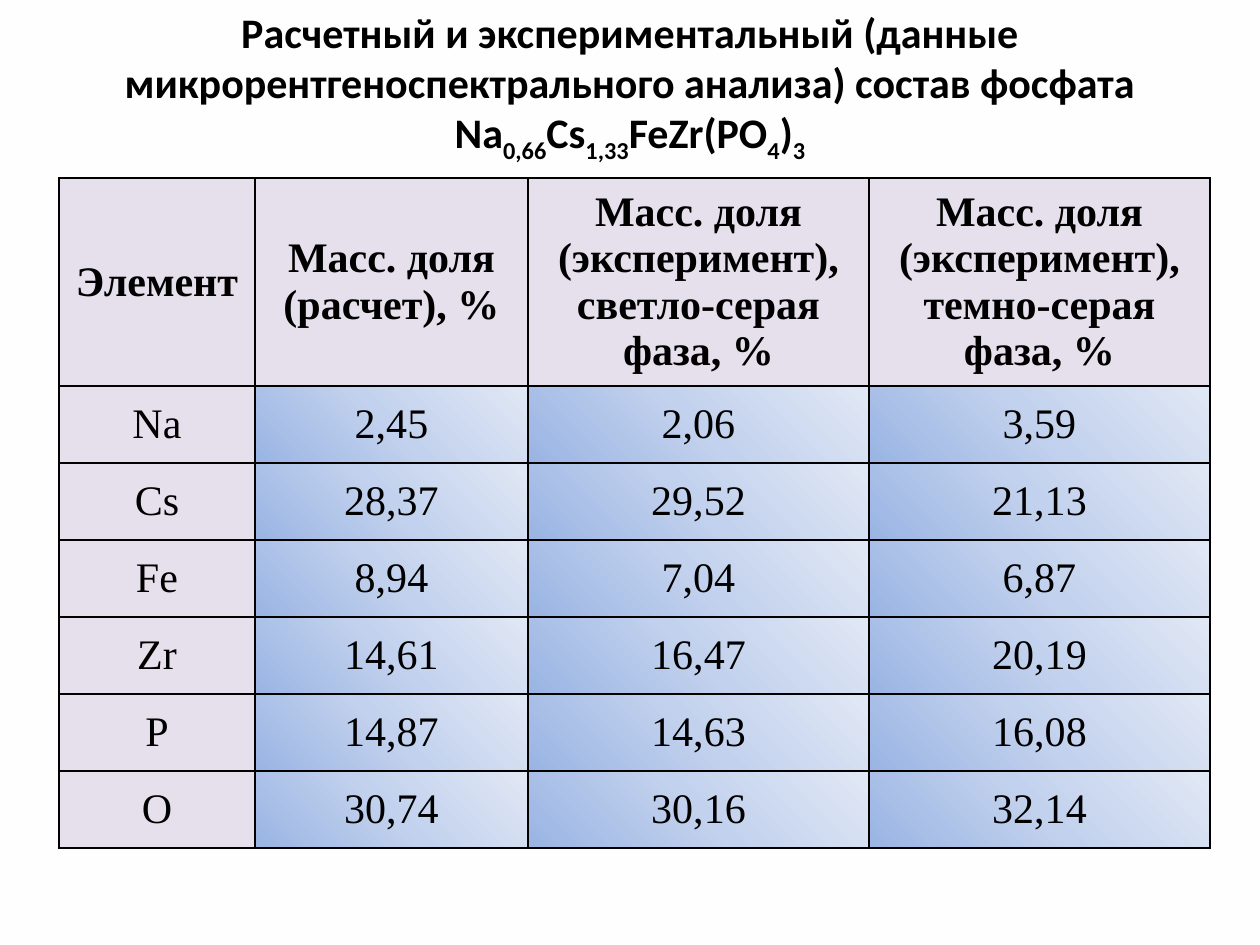
from dataclasses import dataclass

from lxml import etree
from pptx import Presentation
from pptx import util as u
from pptx.dml.color import RGBColor
from pptx.enum import text
from pptx.oxml import ns

EMU_PER_PX = 914400 / 126
BLACK, LILAC = "000000", "E6E0EC"
BLUES = {0: "9AB5E4", 50: "C2D1ED", 100: "E1E8F5"}


@dataclass(frozen=True)
class Run:
    text: str
    subscript: bool = False


@dataclass(frozen=True)
class Column:
    width: int
    heading: tuple[str, ...]
    values: tuple[str, ...]


TITLE = (
    Run("Расчетный и экспериментальный (данные микрорентгеноспектрального анализа) "
        "состав фосфата Na"),
    Run("0,66", True), Run("Cs"), Run("1,33", True),
    Run("FeZr(PO"), Run("4", True), Run(")"), Run("3", True),
)
COLUMNS = (
    Column(196, ("Элемент",), ("Na", "Cs", "Fe", "Zr", "P", "O")),
    Column(273, ("Масс. доля", "(расчет), %"),
           ("2,45", "28,37", "8,94", "14,61", "14,87", "30,74")),
    Column(341, ("Масс. доля (эксперимент),", "светло-серая фаза, %"),
           ("2,06", "29,52", "7,04", "16,47", "14,63", "30,16")),
    Column(341, ("Масс. доля (эксперимент),", "темно-серая фаза, %"),
           ("3,59", "21,13", "6,87", "20,19", "16,08", "32,14")),
)
HEADING_HEIGHT, VALUE_HEIGHT = 208, 77


def px(length: int) -> u.Emu:
    return u.Emu(round(length * EMU_PER_PX))


def color(value: str) -> RGBColor:
    return RGBColor.from_string(value)


def add_xml(parent, tag: str, **attributes):
    return etree.SubElement(parent, ns.qn(tag), attributes)


def write(frame, paragraphs, *, font: str, size: int = 24, bold: bool = False,
          fill: str = BLACK) -> None:
    """Fill a text frame with centred paragraphs, each a sequence of runs."""
    for index, runs in enumerate(paragraphs):
        paragraph = frame.paragraphs[0] if index == 0 else frame.add_paragraph()
        paragraph.alignment = text.PP_ALIGN.CENTER
        for part in runs:
            run = paragraph.add_run()
            run.text = part.text
            run.font.name, run.font.size, run.font.bold = font, u.Pt(size), bold
            run.font.color.rgb = color(fill)
            if part.subscript:
                run.font._element.set("baseline", "-25000")


def add_borders(cell) -> None:
    properties = cell._tc.get_or_add_tcPr()
    for side in ("L", "R", "T", "B"):
        line = add_xml(properties, f"a:ln{side}", w=str(u.Pt(1)))
        add_xml(add_xml(line, "a:solidFill"), "a:srgbClr", val=BLACK)


def add_corner_gradient(cell) -> None:
    """Spread the blues from the bottom left corner of the cell."""
    gradient = add_xml(cell._tc.get_or_add_tcPr(), "a:gradFill", rotWithShape="1")
    stops = add_xml(gradient, "a:gsLst")
    for position, blue in BLUES.items():
        stop = add_xml(stops, "a:gs", pos=str(position * 1000))
        add_xml(stop, "a:srgbClr", val=blue)
    spread = add_xml(gradient, "a:path", path="circle")
    add_xml(spread, "a:fillToRect", t="100000", r="100000")


def format_cell(cell, lines: tuple[str, ...], *, heading: bool, label: bool) -> None:
    cell.margin_left = cell.margin_right = px(9)
    cell.margin_top = cell.margin_bottom = 0
    cell.vertical_anchor = text.MSO_ANCHOR.MIDDLE
    write(cell.text_frame, [[Run(line)] for line in lines],
          font="Times New Roman", bold=heading)
    add_borders(cell)
    if heading or label:
        cell.fill.solid()
        cell.fill.fore_color.rgb = color(LILAC)
    else:
        add_corner_gradient(cell)


def add_composition(slide, left: int, top: int) -> None:
    value_count = len(COLUMNS[0].values)
    width = sum(column.width for column in COLUMNS)
    height = HEADING_HEIGHT + value_count * VALUE_HEIGHT
    table = slide.shapes.add_table(value_count + 1, len(COLUMNS), px(left), px(top),
                                   px(width), px(height)).table
    for index, row in enumerate(table.rows):
        row.height = px(VALUE_HEIGHT if index else HEADING_HEIGHT)
    for c, column in enumerate(COLUMNS):
        table.columns[c].width = px(column.width)
        entries = [column.heading, *((value,) for value in column.values)]
        for r, lines in enumerate(entries):
            format_cell(table.cell(r, c), lines, heading=r == 0, label=c == 0)


def add_title(slide) -> None:
    frame = slide.shapes.add_textbox(0, 0, px(1260), px(165)).text_frame
    frame.word_wrap = True
    frame.auto_size = text.MSO_AUTO_SIZE.SHAPE_TO_FIT_TEXT
    write(frame, [TITLE], font="Calibri", bold=True)


def main() -> None:
    deck = Presentation()
    deck.slide_width, deck.slide_height = px(1260), px(945)
    slide = deck.slides.add_slide(deck.slide_layouts[6])
    slide.background.fill.solid()
    slide.background.fill.fore_color.rgb = color("FFFEFF")
    add_composition(slide, 59, 178)
    add_title(slide)
    deck.save("out.pptx")


if __name__ == "__main__":
    main()
